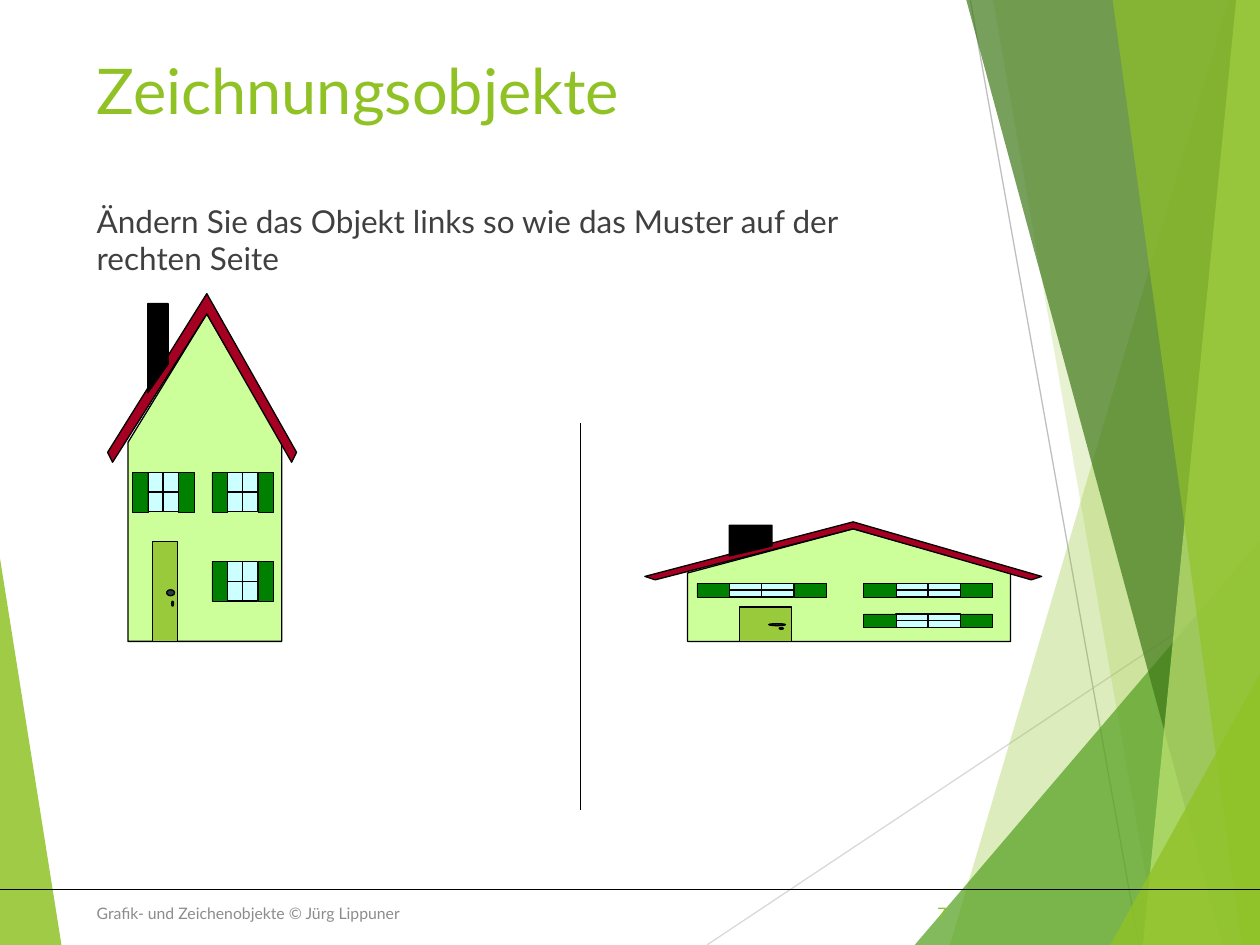
import pptx
import pptx.dml.color
import pptx.enum.shapes
import pptx.enum.text
import pptx.oxml
import pptx.oxml.ns
import pptx.util
from pptx.util import Cm

WIDTH, HEIGHT = 25.4, 19.05
HOUSE_WIDTH, HOUSE_HEIGHT = 3.81, 7.01
BLACK, GREEN = "000000", "90C226"


def colour(code):
    return pptx.dml.color.RGBColor.from_string(code)


class Painter:
    """Holds the style, the current slide and the target for new shapes."""
    font = "Lato"

    def __init__(self, page):
        self.page = page
        self.shapes = page.shapes
        self.place(0, 0)

    def place(self, left, top, scale_x=1, scale_y=1):
        self.left, self.top = left, top
        self.scale_x, self.scale_y = scale_x, scale_y

    def point(self, x, y):
        return Cm(self.left + x * self.scale_x), Cm(self.top + y * self.scale_y)

    def dress(self, shape, fill, line=None, opacity=100):
        shape.shadow.inherit = False
        shape.fill.solid()
        shape.fill.fore_color.rgb = colour(fill)
        if opacity < 100:
            tint = shape.fill._xPr.find(".//" + pptx.oxml.ns.qn("a:srgbClr"))
            alpha = tint.makeelement(pptx.oxml.ns.qn("a:alpha"), {"val": str(opacity * 1000)})
            tint.append(alpha)
        if line is None:
            shape.line.fill.background()
        else:
            shape.line.color.rgb = colour(BLACK)
            shape.line.width = pptx.util.Pt(line)

    def outline(self, points, fill, line=None, opacity=100):
        corners = [self.point(x, y) for x, y in points]
        builder = self.shapes.build_freeform(*corners[0])
        builder.add_line_segments(corners[1:], close=True)
        self.dress(builder.convert_to_shape(), fill, line, opacity)

    def preset(self, kind, x, y, width, height, fill, line=0.75):
        left, top = self.point(x, y)
        right, bottom = self.point(x + width, y + height)
        shape = self.shapes.add_shape(kind, left, top, right - left, bottom - top)
        self.dress(shape, fill, line)

    def rectangle(self, *place_and_style):
        self.preset(pptx.enum.shapes.MSO_SHAPE.RECTANGLE, *place_and_style)

    def oval(self, *place_and_style):
        self.preset(pptx.enum.shapes.MSO_SHAPE.OVAL, *place_and_style)

    def line(self, start, end, code=BLACK):
        connector = self.shapes.add_connector(
            pptx.enum.shapes.MSO_CONNECTOR.STRAIGHT, *self.point(*start), *self.point(*end))
        connector.line.color.rgb = colour(code)
        connector.line.width = pptx.util.Pt(0.75)
        properties = connector._element.spPr
        properties.append(properties.makeelement(pptx.oxml.ns.qn("a:effectLst"), {}))

    def text(self, words, x, y, width, height, size, code, middle=False, right=False):
        box = self.shapes.add_textbox(Cm(x), Cm(y), Cm(width), Cm(height))
        frame = box.text_frame
        frame.word_wrap = True
        frame.text = words
        anchors = pptx.enum.text.MSO_ANCHOR
        frame.vertical_anchor = anchors.MIDDLE if middle else anchors.TOP
        para = frame.paragraphs[0]
        if right:
            para.alignment = pptx.enum.text.PP_ALIGN.RIGHT
        span = para.runs[0]
        span.font.name = self.font
        span.font.size = pptx.util.Pt(size)
        span.font.color.rgb = colour(code)

    def window(self, x, y):
        pane, height = 0.31, 0.8
        for column in (1, 2):
            self.rectangle(x + column * pane, y, pane, height, "CCFFFF")
        for column in (0, 3):
            self.rectangle(x + column * pane, y, pane, height, "008000", 0.25)
        self.line((x + pane, y + height / 2), (x + 3 * pane, y + height / 2))

    def house(self, left, top, width, height):
        self.shapes = self.page.shapes.add_group_shape().shapes
        self.place(left, top, width / HOUSE_WIDTH, height / HOUSE_HEIGHT)
        # Wall, roof and chimney
        self.outline([(0.41, 3), (0.41, 7.01), (3.51, 7.01), (3.51, 3), (2, 0.41)],
                     "CCFF99", 0.75)
        self.outline([(0.1, 3.4), (2, 0.41), (3.71, 3.4), (3.81, 3.2), (2, 0), (0, 3.2)],
                     "A50021", 0.75)
        self.outline([(0.81, 2), (0.81, 0.2), (1.22, 0.2), (1.22, 1.42)], BLACK, 0.75)
        # Door with handle and keyhole
        self.rectangle(0.91, 5, 0.5, 2.01, "99CA3C")
        self.oval(1.19, 5.97, 0.16, 0.12, "2C3C43")
        self.oval(1.29, 6.2, 0.04, 0.1, "2C3C43")
        # Windows
        for x, y in ((0.5, 3.6), (2.1, 3.6), (2.1, 5.4)):
            self.window(x, y)
        self.shapes = self.page.shapes
        self.place(0, 0)


def main():
    deck = pptx.Presentation()
    deck.slide_width, deck.slide_height = Cm(WIDTH), Cm(HEIGHT)
    painter = Painter(deck.slides.add_slide(deck.slide_layouts[6]))

    # Background facets
    painter.outline([(0, 11.25), (1.24, HEIGHT), (0, HEIGHT)], GREEN, opacity=85)
    painter.line((14.25, HEIGHT), (WIDTH, 11.63), "D9D9D9")
    painter.line((19.56, 0), (22.96, HEIGHT), "BFBFBF")
    # Each facet: x at its top, y of its top, x at the slide bottom, fill, opacity
    facets = [
        (24.77, 0, 19.15, GREEN, 30),
        (20.02, 0, 23.34, GREEN, 20),
        (WIDTH, 10.9, 18.44, "54A021", 72),
        (19.48, 0, 24.64, "3F7819", 70),
        (24.92, 0, 23.04, "C0E474", 70),
        (22.43, 0, 25.04, GREEN, 65),
        (WIDTH, 13.59, 22.38, GREEN, 80),
    ]
    for top_x, top_y, bottom_x, fill, opacity in facets:
        corners = [(top_x, top_y), (bottom_x, HEIGHT), (WIDTH, HEIGHT)]
        if top_x < WIDTH:
            corners.append((WIDTH, top_y))
        painter.outline(corners, fill, opacity=opacity)
    painter.line((0, 17.93), (WIDTH, 17.93))

    # Title, task and footer
    painter.text("Zeichnungsobjekte", 1.7, 0.91, 17.63, 2.51, 36, GREEN)
    painter.text("Ändern Sie das Objekt links so wie das Muster auf der rechten Seite",
                 1.7, 3.94, 17.63, 10.77, 18, "404040")
    painter.text("Grafik- und Zeichenobjekte © Jürg Lippuner",
                 1.7, 17.91, 12.85, 1.02, 9, "8C8C8C", middle=True)
    painter.text("7", 17.91, 17.91, 1.42, 1.02, 9, GREEN, middle=True, right=True)

    # The house to change, the divider and the stretched sample
    painter.house(2.17, 5.92, HOUSE_WIDTH, HOUSE_HEIGHT)
    painter.line((11.7, 8.53), (11.7, 16.33))
    painter.house(13, 10.52, 8, 2.41)

    deck.save("out.pptx")


if __name__ == "__main__":
    main()
